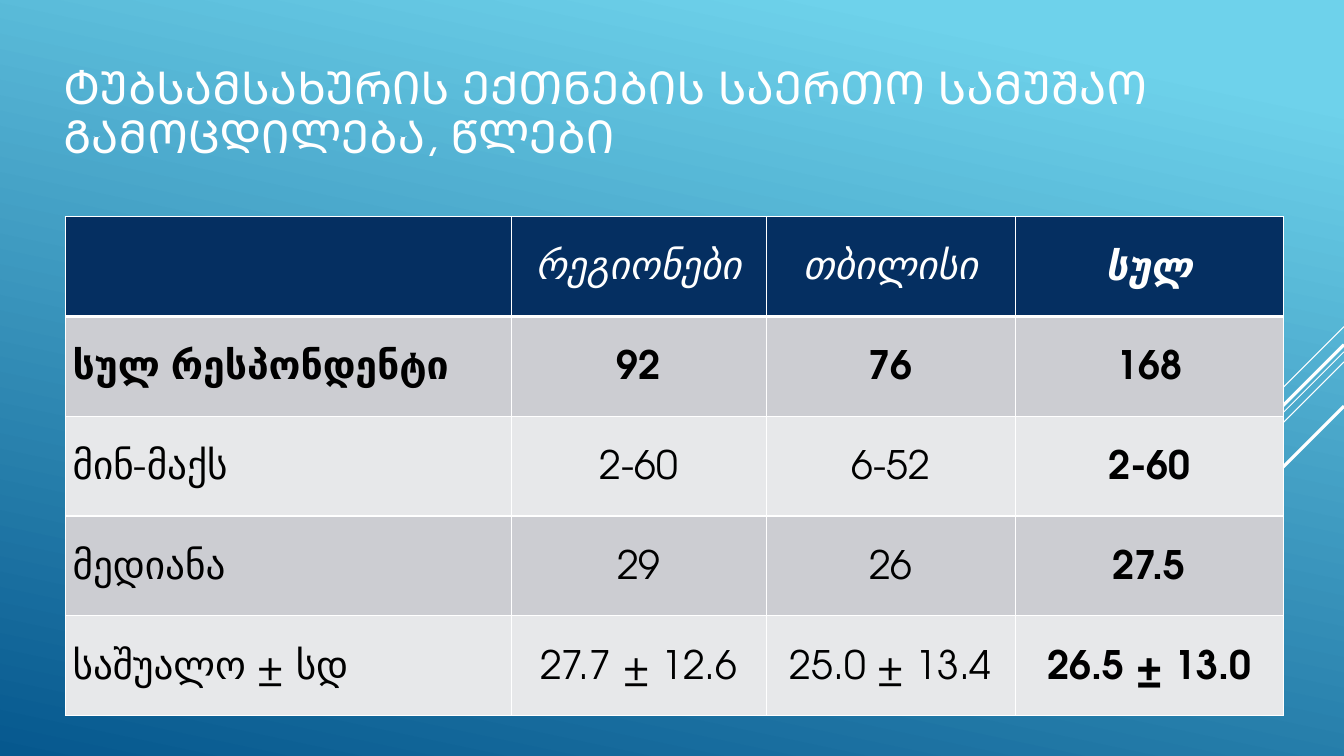
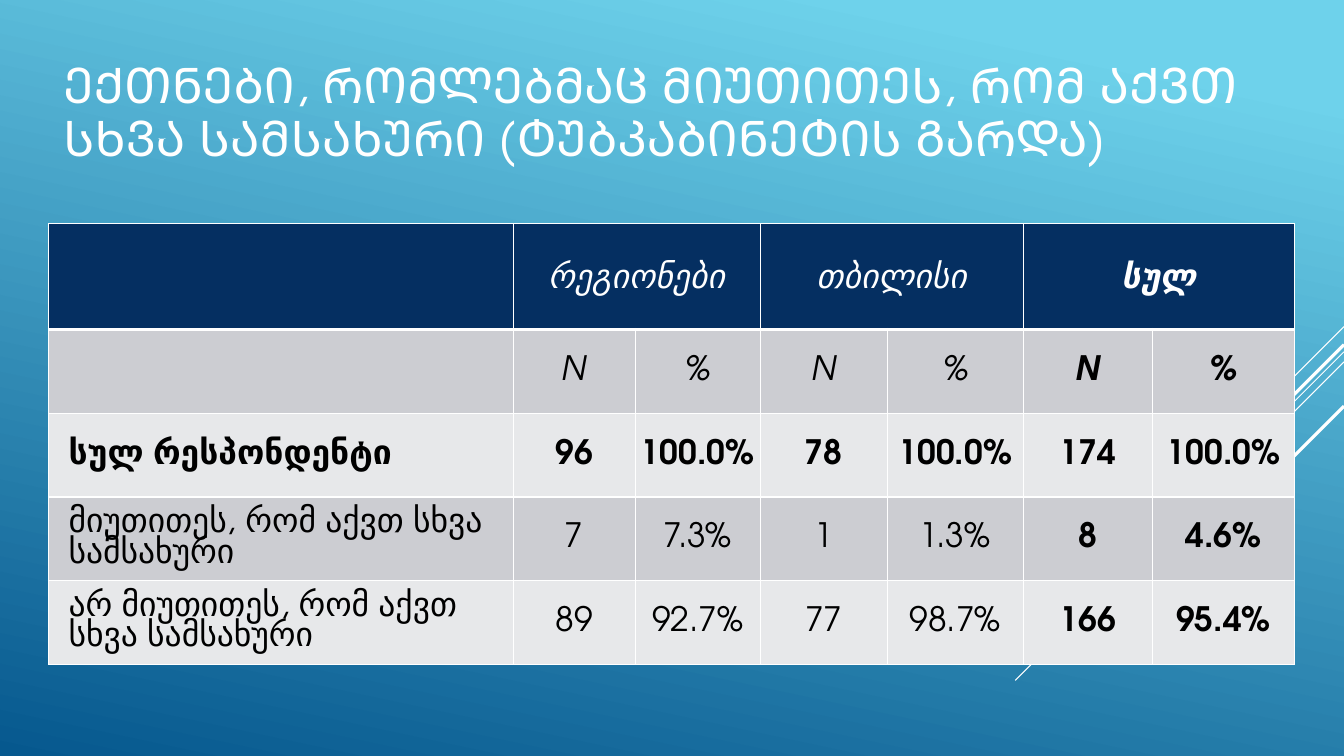
from dataclasses import dataclass

from lxml import etree
from pptx import Presentation
from pptx.dml.color import RGBColor
from pptx.enum.shapes import MSO_CONNECTOR
from pptx.enum.text import MSO_ANCHOR, PP_ALIGN
from pptx.oxml.ns import qn
from pptx.util import Pt

PX = 9144
FONT = "TeX Gyre Adventor"
WHITE, BLACK, NAVY = "FFFFFF", "000000", "052F61"
ROW_FILLS = ("E7E8EA", "CCCDD2")
GRADIENT = ((0.1, "6ED2EB"), (1.0, "06588E"))
GRADIENT_ANGLE = 258
MIDDLE = MSO_ANCHOR.MIDDLE
LEFT, CENTER = PP_ALIGN.LEFT, PP_ALIGN.CENTER
STRAIGHT = MSO_CONNECTOR.STRAIGHT
SLIDE_WIDTH, SLIDE_HEIGHT = 1333, 750
DIAGONALS = ((324, 100, 0.75), (349, 326, 0.75), (359, 207, 0.75),
             (342, 191, 2.25), (403, 139, 2.25))


@dataclass
class TableStyle:
    """Type settings of one table; rows above total_row are italic."""
    size: int
    total_row: int
    bold_column: int
    label_inset: int
    inset: int
    header_spacing: object
    body_spacing: object


def px(length):
    """Turn px into EMU."""
    return round(length * PX)


def color(value):
    """Turn a hex string into a colour."""
    return RGBColor.from_string(value)


def add_run(paragraph, text, size, fill, bold=False, italic=False):
    """Add one run of styled text."""
    run = paragraph.add_run()
    run.text = text
    font = run.font
    font.name, font.size, font.bold, font.italic = FONT, Pt(size), bold, italic
    font.color.rgb = color(fill)


def add_backdrop(slide):
    """Fill the background and draw the diagonals at the right edge."""
    fill = slide.background.fill
    fill.gradient()
    fill.gradient_angle = GRADIENT_ANGLE
    for stop, (position, value) in zip(fill.gradient_stops, GRADIENT):
        stop.position = position
        stop.color.rgb = color(value)
    for top, reach, weight in DIAGONALS:
        line = slide.shapes.add_connector(
            STRAIGHT, px(SLIDE_WIDTH), px(top), px(SLIDE_WIDTH - reach), px(top + reach))
        line.line.color.rgb = color(WHITE)
        line.line.width = Pt(weight)
        etree.SubElement(line._element.spPr, qn("a:effectLst"))


def add_title(slide, box, text, size, spacing):
    """Place the slide title in its box."""
    frame = slide.shapes.add_textbox(*map(px, box)).text_frame
    frame.word_wrap = True
    frame.vertical_anchor = MIDDLE
    paragraph = frame.paragraphs[0]
    paragraph.line_spacing = spacing
    add_run(paragraph, text, size, WHITE)


def set_borders(cell, top, bottom):
    """Draw white borders round a cell, with top and bottom widths in points."""
    properties = cell._tc.get_or_add_tcPr()
    for side, width in (("L", 1), ("R", 1), ("T", top), ("B", bottom)):
        line = etree.SubElement(properties, qn(f"a:ln{side}"), w=str(Pt(width)))
        solid = etree.SubElement(line, qn("a:solidFill"))
        etree.SubElement(solid, qn("a:srgbClr"), val=WHITE)


def fill_cell(cell, row, column, text, style):
    """Style one cell by its place in the table and write its text."""
    header = row == 0
    set_borders(cell, 3 if row == 1 else 1, 3 if header else 1)
    cell.fill.solid()
    cell.fill.fore_color.rgb = color(NAVY if header else ROW_FILLS[row % 2])
    cell.vertical_anchor = MIDDLE
    cell.margin_top = cell.margin_bottom = 0
    cell.margin_left = px(style.inset if column else style.label_inset)
    cell.margin_right = px(style.inset)
    if text:
        paragraph = cell.text_frame.paragraphs[0]
        paragraph.alignment = CENTER if column else LEFT
        paragraph.line_spacing = style.header_spacing if header else style.body_spacing
        bold = row == style.total_row or column >= style.bold_column
        add_run(paragraph, text, style.size, WHITE if header else BLACK,
                bold, row < style.total_row)


def add_data_table(slide, origin, widths, heights, rows, style, merges=()):
    """Place a table at its origin, merging header pairs from the given columns."""
    left, top = origin
    table = slide.shapes.add_table(
        len(heights), len(widths), px(left), px(top),
        px(sum(widths)), px(sum(heights))).table
    table.first_row = table.horz_banding = False
    for column, width in zip(table.columns, widths):
        column.width = px(width)
    for row, height in zip(table.rows, heights):
        row.height = px(height)
    for row, texts in enumerate(rows):
        for column, text in enumerate(texts):
            fill_cell(table.cell(row, column), row, column, text, style)
    for column in merges:
        table.cell(0, column).merge(table.cell(0, column + 1))


def build_experience_slide(slide):
    """Build the slide on years of work experience."""
    add_backdrop(slide)
    add_title(slide, (53, 52, 1145, 123),
              "ᲢᲣᲑᲡᲐᲛᲡᲐᲮᲣᲠᲘᲡ ᲔᲥᲗᲜᲔᲑᲘᲡ ᲡᲐᲔᲠᲗᲝ ᲡᲐᲛᲣᲨᲐᲝ ᲒᲐᲛᲝᲪᲓᲘᲚᲔᲑᲐ, ᲬᲚᲔᲑᲘ", 32.4, 0.9)
    rows = (
        ("", "რეგიონები", "თბილისი", "სულ"),
        ("სულ რესპონდენტი", "92", "76", "168"),
        ("მინ-მაქს", "2-60", "6-52", "2-60"),
        ("მედიანა", "29", "26", "27.5"),
        ("საშუალო ± სდ", "27.7 ± 12.6", "25.0 ± 13.4", "26.5 ± 13.0"),
    )
    add_data_table(slide, (65, 215), (442, 253, 247, 266), [99] * 5, rows,
                   TableStyle(28, 1, 3, 7, 7, 1.15, 1.15))


def build_other_job_slide(slide):
    """Build the slide on nurses who have another job."""
    add_backdrop(slide)
    rows = (
        ("", "რეგიონები", "", "თბილისი", "", "სულ", ""),
        ("",) + ("N", "%") * 3,
        ("სულ რესპონდენტი", "96", "100.0%", "78", "100.0%", "174", "100.0%"),
        ("მიუთითეს, რომ აქვთ სხვა სამსახური",
         "7", "7.3%", "1", "1.3%", "8", "4.6%"),
        ("არ მიუთითეს, რომ აქვთ სხვა სამსახური",
         "89", "92.7%", "77", "98.7%", "166", "95.4%"),
    )
    add_data_table(slide, (48, 222), (461, 121, 124, 126, 135, 128, 141),
                   [105] + [83] * 4, rows,
                   TableStyle(24, 2, 5, 20, 0, 1.15, Pt(22)), merges=(1, 3, 5))
    add_title(slide, (53, 52, 1231, 123),
              "ᲔᲥᲗᲜᲔᲑᲘ, ᲠᲝᲛᲚᲔᲑᲛᲐᲪ ᲛᲘᲣᲗᲘᲗᲔᲡ, ᲠᲝᲛ ᲐᲥᲕᲗ ᲡᲮᲕᲐ ᲡᲐᲛᲡᲐᲮᲣᲠᲘ (ᲢᲣᲑᲙᲐᲑᲘᲜᲔᲢᲘᲡ ᲒᲐᲠᲓᲐ)",
              35.1, 0.9)


def main():
    """Build and save the presentation."""
    presentation = Presentation()
    presentation.slide_width = px(SLIDE_WIDTH)
    presentation.slide_height = px(SLIDE_HEIGHT)
    blank = presentation.slide_layouts[6]
    for build in (build_experience_slide, build_other_job_slide):
        build(presentation.slides.add_slide(blank))
    presentation.save("out.pptx")


if __name__ == "__main__":
    main()
